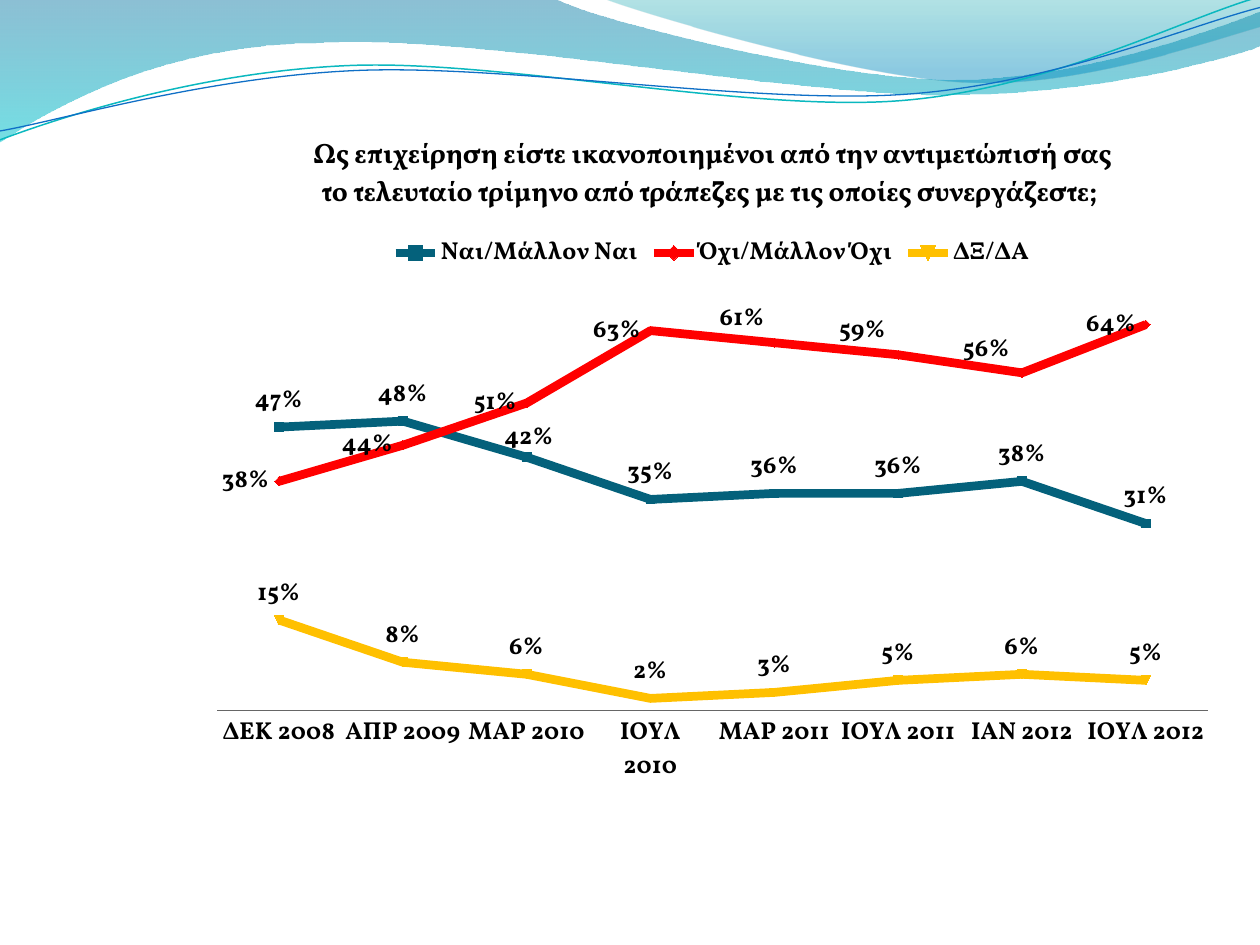
import math
from lxml import etree
from pptx import Presentation
from pptx.chart import data as cd
from pptx.dml.color import RGBColor
from pptx.enum import chart as ch
from pptx.oxml import ns
from pptx.util import Inches, Pt

# Content
TITLE = ("Ως επιχείρηση είστε ικανοποιημένοι από την αντιμετώπισή σας "
         "το τελευταίο τρίμηνο από τράπεζες με τις οποίες συνεργάζεστε; ")
CATS = ["ΔΕΚ 2008", "ΑΠΡ 2009", "ΜΑΡ 2010", "ΙΟΥΛ 2010",
        "ΜΑΡ 2011", "ΙΟΥΛ 2011", "ΙΑΝ 2012", "ΙΟΥΛ 2012"]
UP, LEFT = ch.XL_LABEL_POSITION.ABOVE, ch.XL_LABEL_POSITION.LEFT
# name, colour, label side, values, {point: label shift in inches}
SERIES = [
    ("Ναι/Μάλλον Ναι", "04617B", UP,
     [.47, .48, .42, .35, .36, .36, .38, .31], {2: (.02, .06)}),
    ("Όχι/Μάλλον Όχι", "FF0000", LEFT,
     [.38, .44, .51, .63, .61, .59, .56, .64],
     {4: (0, -.19), 5: (-.02, -.19), 6: (-.02, -.18)}),
    ("ΔΞ/ΔΑ", "FFC000", UP,
     [.15, .08, .06, .02, .03, .05, .06, .05], {}),
]
THEME = dict(face="Vollkorn", ink="000000", axis="666666",
             title=16, text=14, base=10, line=5)
BOX = (1.56, .86, 8.19, 5.47)
TILT = -2.7

# Waves: start, then line (2 numbers) or curve (6 numbers) steps
BANDS = [
    ((0, -.01), [(4.4, -.01), (4.76, .17, 6.64, .63, 7.58, .63),
                 (8.53, .63, 9.58, .26, 10, .09), (10.01, .36),
                 (9.83, .44, 8.7, .76, 7.46, .75),
                 (6.22, .75, 3.82, .28, 2.57, .34),
                 (1.29, .35, .46, .83, -.01, 1.13)],
     [(0, "0074A1", 45), (1, "00C6CF", 55)]),
    ((4.79, -.01), [(5.09, .11, 6.82, .62, 7.69, .65),
                    (8.56, .69, 9.61, .32, 10, .21), (10, 0)],
     [(0, "00A1A9", 30), (.8, "008BBF", 45)]),
]
LINES = [
    ((0, 1.11), [(.48, .93, 1.58, .57, 2.77, .52),
                 (3.95, .47, 5.93, .89, 7.13, .8),
                 (8.33, .71, 9.38, .15, 9.98, -.02)],
     (4.99, .58), "0AB8BF", .85),
    ((0, 1.04), [(.47, .96, 1.64, .61, 2.83, .56),
                 (4.03, .51, 5.97, .83, 7.17, .75),
                 (8.36, .67, 9.41, .21, 10, .06)],
     (5, .59), "0F6FC6", .75),
]


def rgb(hue):
    return RGBColor.from_string(hue)


def style(font, size, bold=True):
    look = dict(name=THEME["face"], size=Pt(size), bold=bold)
    for key, val in look.items():
        setattr(font, key, val)
    font.color.rgb = rgb(THEME["ink"])


def turn(pts, mid, deg):
    """Rotate points about a centre."""
    c, s = math.cos(math.radians(deg)), math.sin(math.radians(deg))
    return [(mid[0] + (x - mid[0]) * c - (y - mid[1]) * s,
             mid[1] + (x - mid[0]) * s + (y - mid[1]) * c) for x, y in pts]


def wave(slide, start, steps, close, mid=(0, 0), tilt=0):
    """Draw a freeform, then join each three control points as a curve."""
    pts = [start] + [step[i:i + 2] for step in steps
                     for i in range(0, len(step), 2)]
    pts = [(Inches(x), Inches(y)) for x, y in turn(pts, mid, -tilt)]
    pen = slide.shapes.build_freeform(*pts[0])
    pen.add_line_segments(pts[1:], close=close)
    shape = pen.convert_to_shape()
    legs = iter(shape.element.xpath(".//a:lnTo"))
    for step in steps:
        leg = next(legs)
        if len(step) == 6:
            leg.tag = ns.qn("a:cubicBezTo")
            for _ in range(2):
                more = next(legs)
                leg.append(more[0])
                more.getparent().remove(more)
    shape.rotation = tilt % 360
    shape.shadow.inherit = False
    return shape


def place(tag, **spots):
    """Add a manual chart layout after a tag."""
    box = etree.Element(ns.qn("c:layout"))
    man = etree.SubElement(box, ns.qn("c:manualLayout"))
    for key, val in spots.items():
        etree.SubElement(man, ns.qn("c:" + key)).set("val", str(val))
    tag.addnext(box)


def backdrop(slide):
    for start, steps, stops in BANDS:
        shape = wave(slide, start, steps, True)
        shape.line.fill.background()
        shape.fill.gradient()
        shape.fill.gradient_angle = 270
        for stop, (pos, hue, _) in zip(shape.fill.gradient_stops, stops):
            stop.position, stop.color.rgb = pos, rgb(hue)
        tags = shape.element.xpath(".//a:gs/a:srgbClr")
        for tag, (_, _, part) in zip(tags, stops):
            etree.SubElement(tag, ns.qn("a:alpha")).set("val", str(part * 1000))
    for start, steps, mid, hue, width in LINES:
        shape = wave(slide, start, steps, False, mid, TILT)
        shape.fill.background()
        shape.line.color.rgb, shape.line.width = rgb(hue), Pt(width)


def plot(slide):
    data = cd.CategoryChartData(number_format="0%")
    data.categories = CATS
    for name, _, _, vals, _ in SERIES:
        data.add_series(name, vals)
    chart = slide.shapes.add_chart(
        ch.XL_CHART_TYPE.LINE_MARKERS, *map(Inches, BOX), data).chart
    wide, high = BOX[2:]
    style(chart.font, THEME["base"], False)

    # Title and legend
    chart.has_title = chart.has_legend = True
    chart.chart_title.include_in_layout = False
    frame = chart.chart_title.text_frame
    frame.text = TITLE
    style(frame.paragraphs[0].runs[0].font, THEME["title"])
    chart.legend.position = ch.XL_LEGEND_POSITION.TOP
    chart.legend.include_in_layout = False
    style(chart.legend.font, THEME["text"])

    # Axes and plot area
    cat, val = chart.category_axis, chart.value_axis
    cat.major_tick_mark = cat.minor_tick_mark = ch.XL_TICK_MARK.NONE
    cat.format.line.color.rgb = rgb(THEME["axis"])
    cat.format.line.width = Pt(.75)
    style(cat.tick_labels.font, THEME["text"])
    for key, num in dict(visible=False, has_major_gridlines=False,
                         minimum_scale=0, maximum_scale=.7).items():
        setattr(val, key, num)
    area = chart.element.xpath(".//c:plotArea")[0]
    for old in area.findall(ns.qn("c:layout")):
        area.remove(old)
    mark = etree.Element("mark")
    area.insert(0, mark)
    place(mark, layoutTarget="inner", xMode="edge", yMode="edge",
          x=.02, y=1.43 / high, w=.96, h=3.35 / high)
    area.remove(mark)

    # Lines and labels
    chart.plots[0].vary_by_categories = False
    for ser, (_, hue, side, _, shifts) in zip(chart.series, SERIES):
        ser.smooth = False
        ser.format.line.color.rgb = rgb(hue)
        ser.format.line.width = Pt(THEME["line"])
        ser.marker.size = 5
        ser.marker.format.fill.solid()
        ser.marker.format.fill.fore_color.rgb = rgb(hue)
        ser.marker.format.line.color.rgb = rgb(hue)
        tags = ser.data_labels
        for key, item in dict(show_value=True, position=side,
                              number_format="0%",
                              number_format_is_linked=False).items():
            setattr(tags, key, item)
        style(tags.font, THEME["text"])
        for i, (dx, dy) in shifts.items():
            tag = ser.points[i].data_label
            style(tag.font, THEME["text"])
            tag.position = side
            idx = ser._element.xpath(f".//c:dLbl/c:idx[@val='{i}']")[0]
            place(idx, x=dx / wide, y=dy / high)


def main():
    deck = Presentation()
    deck.slide_width, deck.slide_height = Inches(10), Inches(7.5)
    slide = deck.slides.add_slide(deck.slide_layouts[6])
    backdrop(slide)
    plot(slide)
    deck.save("out.pptx")


if __name__ == "__main__":
    main()
